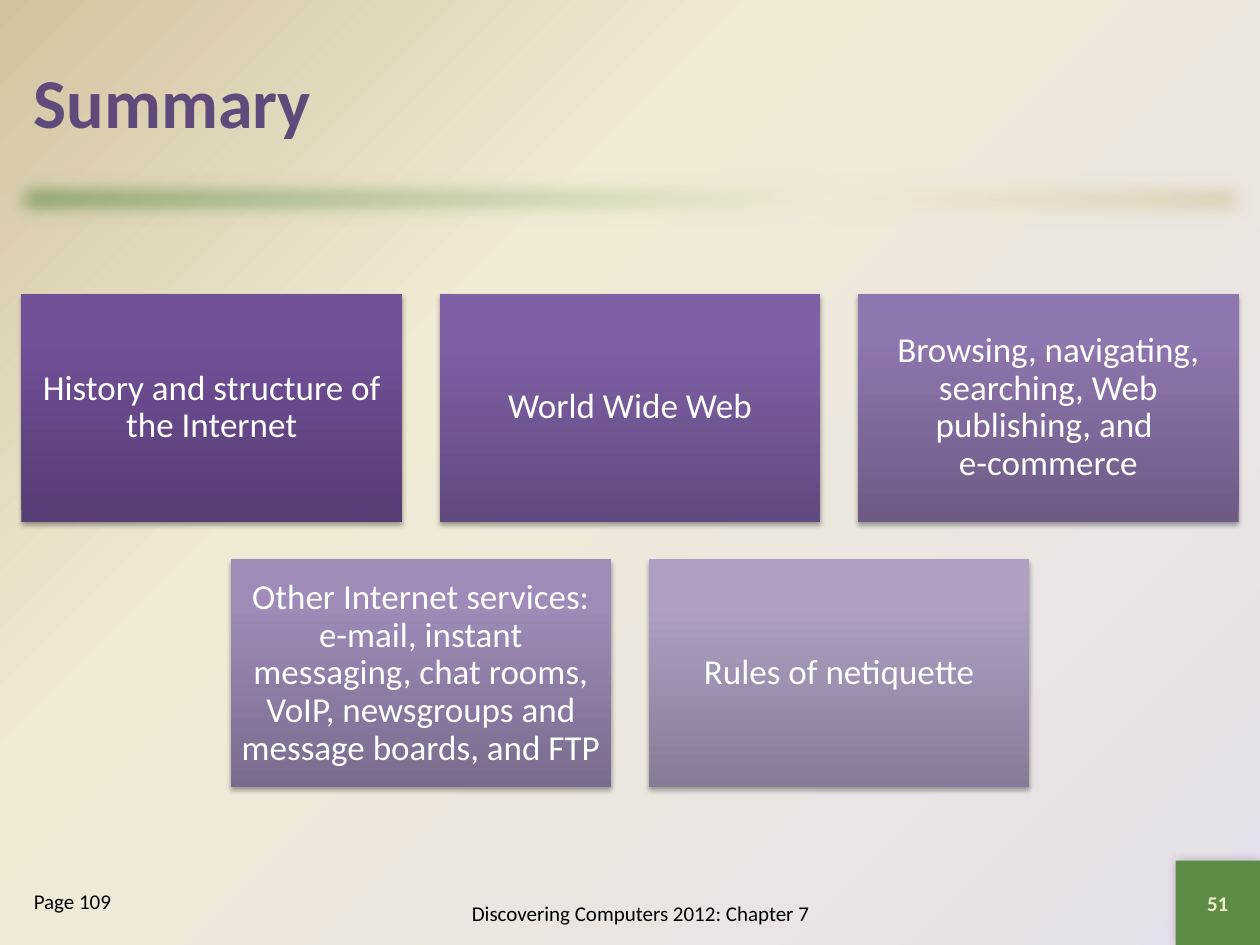
from lxml import etree
from pptx import Presentation
from pptx.dml.color import RGBColor
from pptx.enum.shapes import MSO_SHAPE as Form
from pptx.enum.text import MSO_ANCHOR as Anchor, PP_ALIGN as Align
from pptx.oxml.ns import qn
from pptx.util import Inches, Pt

GREEN = RGBColor(0x5E, 0x8B, 0x46)
CREAM = RGBColor(0xF0, 0xEB, 0xD5)
TAN = RGBColor(0xD1, 0xC3, 0x9F)
LILAC = RGBColor(0xE6, 0xE0, 0xEC)
PLUM = RGBColor(0x60, 0x4A, 0x7B)
PALE = RGBColor(0xEE, 0xEB, 0xCA)
WHITE = RGBColor(0xFF, 0xFF, 0xFF)
BLACK = RGBColor(0x00, 0x00, 0x00)
SHADES = [
    (RGBColor(0x56, 0x3D, 0x74), RGBColor(0x70, 0x50, 0x97), RGBColor(0x70, 0x4F, 0x99)),
    (RGBColor(0x61, 0x4A, 0x7F), RGBColor(0x7E, 0x60, 0xA5), RGBColor(0x7F, 0x60, 0xA7)),
    (RGBColor(0x6D, 0x5B, 0x86), RGBColor(0x8E, 0x76, 0xAE), RGBColor(0x8E, 0x75, 0xB0)),
    (RGBColor(0x79, 0x6B, 0x8E), RGBColor(0x9E, 0x8B, 0xB8), RGBColor(0x9E, 0x8B, 0xBA)),
    (RGBColor(0x86, 0x7B, 0x96), RGBColor(0xAE, 0x9F, 0xC3), RGBColor(0xAE, 0x9F, 0xC4)),
]
TOPICS = [
    "History and structure of the Internet",
    "World Wide Web",
    "Browsing, navigating, searching, Web publishing, and \ne-commerce",
    "Other Internet services: e-mail, instant messaging, chat rooms, "
    "VoIP, newsgroups and message boards, and FTP",
    "Rules of netiquette",
]


def add(parent, tag, **attrs):
    return etree.SubElement(parent, qn(tag), {k: str(v) for k, v in attrs.items()})


class Deck:
    font = "Calibri"

    def __init__(self, slide):
        self.slide = slide

    def blend(self, fill, root, stops, angle=None):
        fill.gradient()
        grad = next(root.iter(qn("a:gradFill")))
        for child in list(grad):
            grad.remove(child)
        group = add(grad, "a:gsLst")
        for spot, color in stops:
            add(add(group, "a:gs", pos=spot * 1000), "a:srgbClr", val=color)
        if angle is None:
            focus = add(grad, "a:path", path="circle")
            add(focus, "a:fillToRect", l=100000, t=100000)
            add(grad, "a:tileRect", r=-100000, b=-100000)
        else:
            add(grad, "a:lin", ang=angle * 60000, scaled=0)

    def ground(self, stops):
        self.blend(self.slide.background.fill, self.slide.element, stops)

    def block(self, box, color=None, stops=None, angle=0):
        shape = self.slide.shapes.add_shape(Form.RECTANGLE, *map(Inches, box))
        shape.shadow.inherit = False
        shape.line.fill.background()
        if stops:
            self.blend(shape.fill, shape.element, stops, angle)
        else:
            shape.fill.solid()
            shape.fill.fore_color.rgb = color
        return shape

    def shade(self, shape, alpha, blur, dist, angle):
        effects = next(shape.element.iter(qn("a:effectLst")))
        outer = add(effects, "a:outerShdw", blurRad=Pt(blur), dist=Pt(dist),
                    dir=angle * 60000, rotWithShape=0)
        add(add(outer, "a:srgbClr", val=BLACK), "a:alpha", val=alpha * 1000)

    def soften(self, shape, size):
        effects = next(shape.element.iter(qn("a:effectLst")))
        add(effects, "a:softEdge", rad=Pt(size))

    def letter(self, shape, text, size, color, bold=False,
               align=Align.CENTER, anchor=Anchor.MIDDLE):
        frame = shape.text_frame
        frame.word_wrap = True
        frame.vertical_anchor = anchor
        para = frame.paragraphs[0]
        para.alignment = align
        for i, line in enumerate(text.split("\n")):
            if i:
                para.add_line_break()
            run = para.add_run()
            run.text = line
            run.font.name = self.font
            run.font.size = Pt(size)
            run.font.bold = bold
            run.font.color.rgb = color
        return para

    def label(self, box, *args, **style):
        shape = self.slide.shapes.add_textbox(*map(Inches, box))
        self.letter(shape, *args, **style)

    def card(self, box, text, shades):
        shape = self.block(box, stops=list(zip((0, 80, 100), shades)), angle=270)
        self.shade(shape, 35, 3.1, 1.8, 90)
        frame = shape.text_frame
        frame.margin_left = frame.margin_right = Inches(0.08)
        frame.margin_top = frame.margin_bottom = Inches(0.08)
        self.letter(shape, text, 20, WHITE).line_spacing = 0.9


def main():
    prs = Presentation()
    prs.slide_width, prs.slide_height = Inches(10), Inches(7.5)
    deck = Deck(prs.slides.add_slide(prs.slide_layouts[6]))
    deck.ground([(0, LILAC), (65, CREAM), (100, TAN)])

    bar = deck.block((0, 1.33, 10, 0.5), angle=45,
                     stops=[(0, GREEN), (65, CREAM), (100, TAN)])
    deck.soften(bar, 12.5)
    deck.label((0.17, 0.17, 9.67, 1.25), "Summary", 40, PLUM, bold=True, align=Align.LEFT)

    wide, high, gap, cols = 3.02, 1.81, 0.3, 3
    for i, (text, shades) in enumerate(zip(TOPICS, SHADES)):
        row, col = divmod(i, cols)
        count = min(cols, len(TOPICS) - row * cols)
        start = (10 - count * wide - (count - 1) * gap) / 2
        left = start + col * (wide + gap)
        deck.card((left, 2.33 + row * (high + gap), wide, high), text, shades)

    deck.label((3, 7, 4.17, 0.5), "Discovering Computers 2012: Chapter 7", 12, BLACK)
    deck.label((0.17, 7, 1.83, 0.5), "Page 109", 12, BLACK,
               align=Align.LEFT, anchor=Anchor.TOP)
    badge = deck.block((9.33, 6.83, 0.67, 0.67), GREEN)
    deck.shade(badge, 20, 6, 0, 225)
    deck.letter(badge, "51", 12, PALE, bold=True)
    prs.save("out.pptx")


if __name__ == "__main__":
    main()
